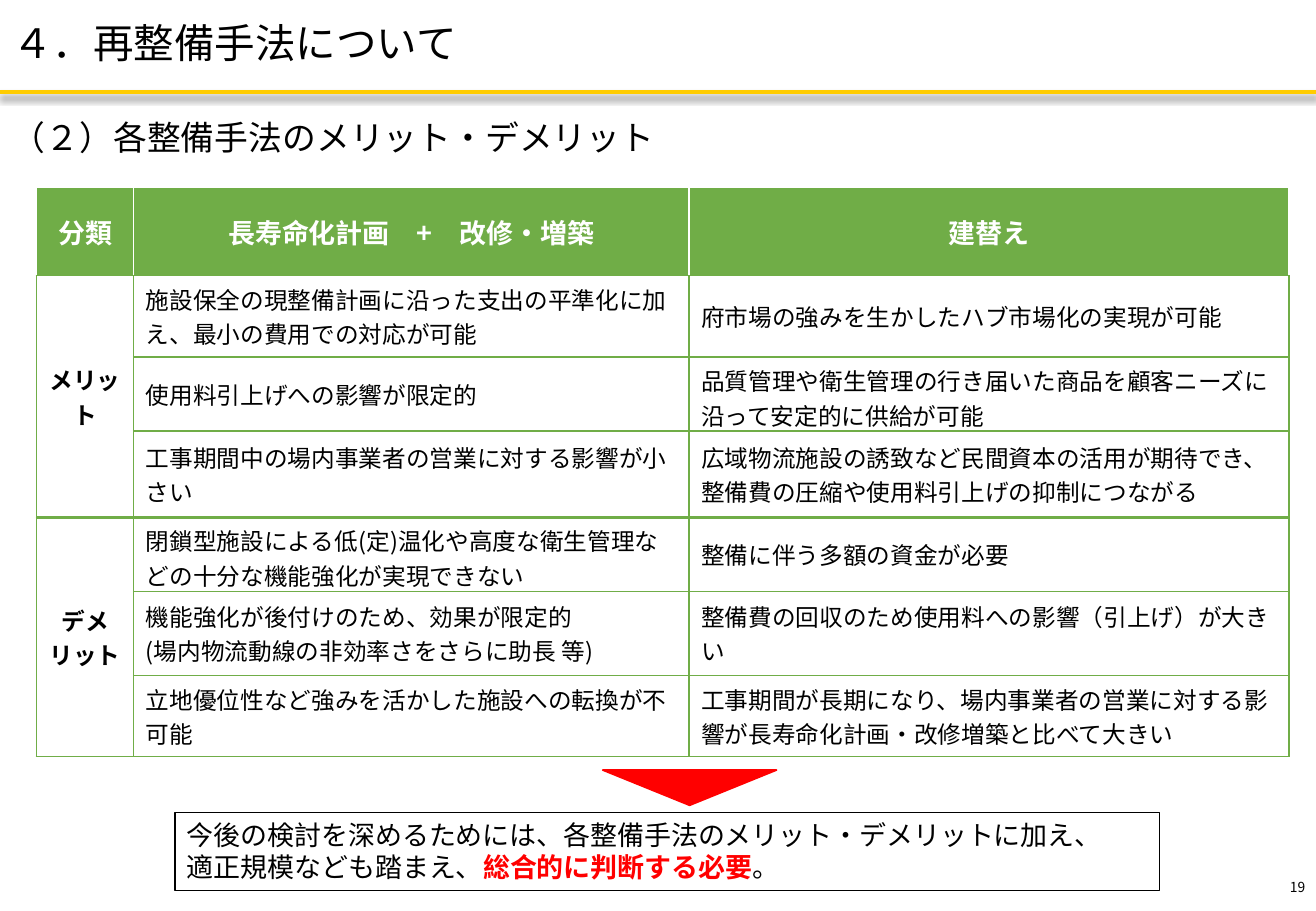
"""Build a slide that compares the merits and demerits of two redevelopment methods."""
import dataclasses

import lxml.etree
import pptx
import pptx.dml.color
import pptx.enum.shapes
import pptx.enum.text
import pptx.oxml.ns
import pptx.util

Inches = pptx.util.Inches
Pt = pptx.util.Pt
Align = pptx.enum.text.PP_ALIGN
Anchor = pptx.enum.text.MSO_ANCHOR
AutoSize = pptx.enum.text.MSO_AUTO_SIZE
Preset = pptx.enum.shapes.MSO_SHAPE
qn = pptx.oxml.ns.qn


@dataclasses.dataclass(frozen=True)
class Theme:
    """Colours in hexadecimal and type sizes in points."""
    font: str = "Noto Sans CJK JP"
    black: str = "000000"
    white: str = "FFFFFF"
    green: str = "70AD47"
    red: str = "FF0000"
    yellow: str = "FFCC00"
    title: float = 24
    subtitle: float = 20
    heading: float = 16
    body: float = 14
    number: float = 8.2


@dataclasses.dataclass(frozen=True)
class Box:
    """A region of the slide in inches."""
    left: float
    top: float
    width: float
    height: float

    def lengths(self):
        """Return left, top, width and height as lengths."""
        return [Inches(value) for value in dataclasses.astuple(self)]


THEME = Theme()
COLUMN_WIDTHS = [0.8, 4.57, 4.94]
ROW_HEIGHTS = [0.73, 0.67, 0.61, 0.71, 0.61, 0.69, 0.67]
HEADINGS = ["分類", "長寿命化計画　+　改修・増築", "建替え"]
GROUPS = {
    "メリット": [
        ("施設保全の現整備計画に沿った支出の平準化に加え、最小の費用での対応が可能",
         "府市場の強みを生かしたハブ市場化の実現が可能"),
        ("使用料引上げへの影響が限定的",
         "品質管理や衛生管理の行き届いた商品を顧客ニーズに沿って安定的に供給が可能"),
        ("工事期間中の場内事業者の営業に対する影響が小さい",
         "広域物流施設の誘致など民間資本の活用が期待でき、整備費の圧縮や使用料引上げの抑制につながる"),
    ],
    "デメリット": [
        ("閉鎖型施設による低(定)温化や高度な衛生管理などの十分な機能強化が実現できない",
         "整備に伴う多額の資金が必要"),
        ("機能強化が後付けのため、効果が限定的\n(場内物流動線の非効率さをさらに助長 等)",
         "整備費の回収のため使用料への影響（引上げ）が大きい"),
        ("立地優位性など強みを活かした施設への転換が不可能",
         "工事期間が長期になり、場内事業者の営業に対する影響が長寿命化計画・改修増築と比べて大きい"),
    ],
}


def rgb(value):
    """Turn a hexadecimal string into a colour."""
    return pptx.dml.color.RGBColor.from_string(value)


def set_values(target, values):
    """Set each named attribute of the target."""
    for name, value in values.items():
        setattr(target, name, value)


def add_run(paragraph, text, size, color=THEME.black, bold=False):
    """Add a formatted run with Latin and East Asian fonts."""
    run = paragraph.add_run()
    run.text = text
    run.font.color.rgb = rgb(color)
    set_values(run.font, {"size": Pt(size), "bold": bold, "name": THEME.font})
    east_asian = lxml.etree.SubElement(run.font._element, qn("a:ea"))
    east_asian.set("typeface", THEME.font)


def write(frame, text, size, color=THEME.black, bold=False, align=Align.LEFT):
    """Write one paragraph for each line of the text."""
    for index, line in enumerate(text.split("\n")):
        paragraph = frame.add_paragraph() if index else frame.paragraphs[0]
        paragraph.alignment = align
        add_run(paragraph, line, size, color, bold)


def add_text_box(slide, box, text, size, frame_values, align=Align.LEFT):
    """Add a wrapped text box."""
    frame = slide.shapes.add_textbox(*box.lengths()).text_frame
    set_values(frame, {"word_wrap": True, **frame_values})
    write(frame, text, size, align=align)


def add_rule(slide, left, top, width, color, weight):
    """Add a horizontal line and return its empty effect list."""
    connector = slide.shapes.add_connector(
        pptx.enum.shapes.MSO_CONNECTOR.STRAIGHT,
        Inches(left), Inches(top), Inches(left + width), Inches(top))
    connector.line.color.rgb = rgb(color)
    connector.line.width = Pt(weight)
    return lxml.etree.SubElement(connector._element.spPr, qn("a:effectLst"))


def add_header(slide, box):
    """Place the title, the shadowed rule and the subtitle."""
    effects = add_rule(slide, box.left, box.top + 0.76, box.width, THEME.yellow, 2.25)
    shadow = lxml.etree.SubElement(
        effects, qn("a:outerShdw"), blurRad=str(Pt(4)), dist=str(Pt(3)),
        dir="5400000", algn="t", rotWithShape="0")
    color = lxml.etree.SubElement(shadow, qn("a:srgbClr"), val=THEME.black)
    lxml.etree.SubElement(color, qn("a:alpha"), val="40000")

    title = slide.shapes.title
    place = Box(box.left, box.top, box.width, 0.74).lengths()
    set_values(title, dict(zip(("left", "top", "width", "height"), place)))
    set_values(title.text_frame, {"vertical_anchor": Anchor.MIDDLE,
                                  "auto_size": AutoSize.NONE, "word_wrap": True})
    write(title.text_frame, "４．再整備手法について", THEME.title)
    title.text_frame.paragraphs[0].line_spacing = 0.9
    add_text_box(slide, Box(box.left, box.top + 0.91, 7.88, 0.44),
                 "（２）各整備手法のメリット・デメリット", THEME.subtitle,
                 {"auto_size": AutoSize.SHAPE_TO_FIT_TEXT})


def style_cell(cell, side_color, top_color, fill=None):
    """Set the borders, fill and anchor of a cell."""
    properties = cell._tc.get_or_add_tcPr()
    colors = {"a:lnL": side_color, "a:lnR": side_color,
              "a:lnT": top_color, "a:lnB": THEME.green}
    for tag, color in colors.items():
        line = lxml.etree.SubElement(properties, qn(tag), w=str(Pt(1)))
        solid = lxml.etree.SubElement(line, qn("a:solidFill"))
        lxml.etree.SubElement(solid, qn("a:srgbClr"), val=color)
    if fill:
        cell.fill.solid()
        cell.fill.fore_color.rgb = rgb(fill)
    else:
        cell.fill.background()
    cell.vertical_anchor = Anchor.MIDDLE


def add_comparison(slide, box):
    """Place the comparison table and the line between its two groups."""
    table = slide.shapes.add_table(
        len(ROW_HEIGHTS), len(COLUMN_WIDTHS), *box.lengths()).table
    table.horz_banding = False
    for column, width in zip(table.columns, COLUMN_WIDTHS):
        column.width = Inches(width)
    for row, height in zip(table.rows, ROW_HEIGHTS):
        row.height = Inches(height)

    for cell, heading in zip(table.rows[0].cells, HEADINGS):
        style_cell(cell, THEME.white, THEME.white, THEME.green)
        write(cell.text_frame, heading, THEME.heading, THEME.white, True, Align.CENTER)
    first = 1
    for label, pairs in GROUPS.items():
        for row, pair in enumerate(pairs, first):
            for cell in table.rows[row].cells:
                style_cell(cell, THEME.green, THEME.green)
            for column, text in enumerate(pair, 1):
                write(table.cell(row, column).text_frame, text, THEME.body)
        origin = table.cell(first, 0)
        first += len(pairs)
        origin.merge(table.cell(first - 1, 0))
        set_values(origin, {"margin_left": Inches(0.07), "margin_right": Inches(0.07),
                            "margin_top": 0, "margin_bottom": 0})
        origin._tc.get_or_add_tcPr().set("vert", "eaVert")
        write(origin.text_frame, label, THEME.body, bold=True, align=Align.CENTER)
    divider = box.top + sum(ROW_HEIGHTS[:1 + len(GROUPS["メリット"])])
    add_rule(slide, box.left, divider, box.width, THEME.green, 1.75)


def add_conclusion(slide, box):
    """Place the downward triangle and the framed conclusion below it."""
    triangle = slide.shapes.add_shape(
        Preset.ISOSCELES_TRIANGLE, *Box(box.left + 3.52, box.top, 1.43, 0.29).lengths())
    set_values(triangle, {"rotation": 180})
    triangle.fill.solid()
    triangle.fill.fore_color.rgb = rgb(THEME.red)
    frame_shape = slide.shapes.add_shape(
        Preset.RECTANGLE, *Box(box.left, box.top + 0.35, box.width, 0.64).lengths())
    frame_shape.fill.background()
    for shape, color, weight in ((triangle, THEME.red, 1), (frame_shape, THEME.black, 0.75)):
        shape.shadow.inherit = False
        shape.line.color.rgb = rgb(color)
        shape.line.width = Pt(weight)
    frame = frame_shape.text_frame
    set_values(frame, {"word_wrap": True, "vertical_anchor": Anchor.TOP,
                       "auto_size": AutoSize.SHAPE_TO_FIT_TEXT})
    write(frame, "今後の検討を深めるためには、各整備手法のメリット・デメリットに加え、\n"
                 "適正規模なども踏まえ、", THEME.heading)
    add_run(frame.paragraphs[1], "総合的に判断する必要", THEME.heading, THEME.red, True)
    add_run(frame.paragraphs[1], "。", THEME.heading)


def main():
    """Build and save the presentation."""
    presentation = pptx.Presentation()
    set_values(presentation, {"slide_width": Inches(10.83), "slide_height": Inches(7.5)})
    slide = presentation.slides.add_slide(presentation.slide_layouts[5])
    add_header(slide, Box(0, 0, 10.83, 1.35))
    add_comparison(slide, Box(0.3, 1.54, sum(COLUMN_WIDTHS), sum(ROW_HEIGHTS)))
    add_conclusion(slide, Box(1.44, 6.34, 8.1, 0.99))
    add_text_box(slide, Box(8.4, 7.1, 2.44, 0.4), "19", THEME.number,
                 {"vertical_anchor": Anchor.MIDDLE}, Align.RIGHT)
    presentation.save("out.pptx")


if __name__ == "__main__":
    main()
